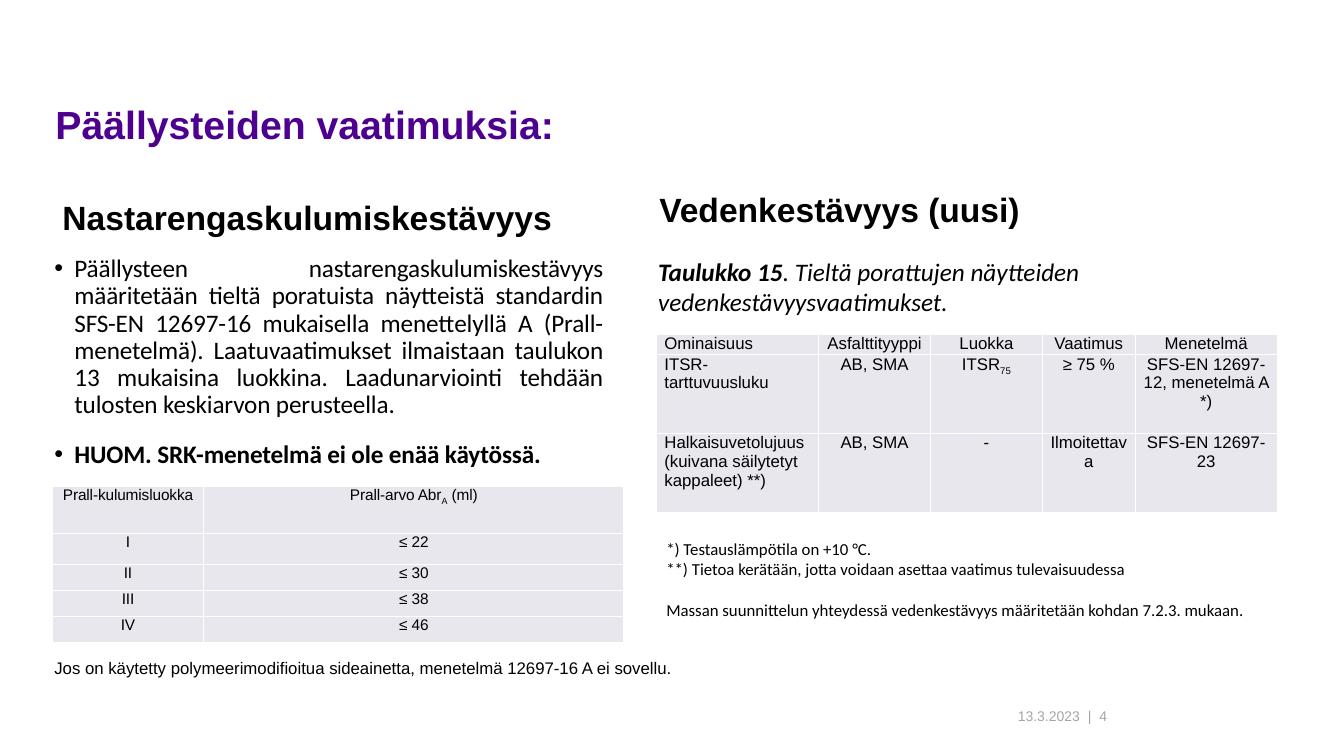
import lxml.etree
import pptx
import pptx.dml.color
import pptx.enum.text
import pptx.oxml
import pptx.oxml.ns
import pptx.util

Inches = pptx.util.Inches
Pt = pptx.util.Pt
Align = pptx.enum.text.PP_ALIGN
Anchor = pptx.enum.text.MSO_ANCHOR
AutoSize = pptx.enum.text.MSO_AUTO_SIZE

PURPLE = pptx.dml.color.RGBColor(0x4E, 0x00, 0x8E)
BLACK = pptx.dml.color.RGBColor(0, 0, 0)
GREY = pptx.dml.color.RGBColor(0xA6, 0xA6, 0xA6)
CELL_FILL = pptx.dml.color.RGBColor(0xE9, 0xE7, 0xEE)

SUBSCRIPT = {"baseline": -25}


def add_xml(parent, name, **attributes):
    return lxml.etree.SubElement(parent, pptx.oxml.ns.qn(name), attributes)


def write(paragraph, content, size=12, font="Arial", color=BLACK, bold=False,
          italic=False, align=Align.LEFT, line=None, before=0, after=0,
          bullet=False, tracking=None):
    """Fill a paragraph from a string or a list of (text, overrides) runs."""
    if bullet:
        properties = paragraph._p.get_or_add_pPr()
        properties.set("marL", str(Inches(0.2)))
        properties.set("indent", str(-Inches(0.2)))
        add_xml(properties, "a:buFont", typeface="Arial")
        add_xml(properties, "a:buChar", char="•")
    paragraph.alignment = align
    paragraph.space_before = Pt(before)
    paragraph.space_after = Pt(after)
    if line:
        paragraph.line_spacing = line
    runs = [(content, {})] if isinstance(content, str) else content
    for text, overrides in runs:
        run = paragraph.add_run()
        run.text = text
        run.font.size = Pt(size)
        run.font.name = font
        run.font.color.rgb = color
        run.font.bold = overrides.get("bold", bold)
        run.font.italic = italic
        run_properties = run._r.get_or_add_rPr()
        if tracking:
            run_properties.set("spc", str(round(tracking * 100)))
        if "baseline" in overrides:
            run_properties.set("baseline", str(overrides["baseline"] * 1000))


class RequirementSlide:
    """Holds the slide and the style shared by its elements."""

    def __init__(self, presentation):
        self.slide = presentation.slides.add_slide(presentation.slide_layouts[5])

    def title(self, text, left, top, width, height):
        heading = self.slide.shapes.title
        heading.left, heading.top = Inches(left), Inches(top)
        heading.width, heading.height = Inches(width), Inches(height)
        frame = heading.text_frame
        frame.auto_size = AutoSize.NONE
        frame.word_wrap = True
        frame.vertical_anchor = Anchor.TOP
        write(frame.paragraphs[0], text, size=28, color=PURPLE, bold=True, line=0.9)

    def text(self, paragraphs, left, top, width, height, anchor=Anchor.TOP,
             wrap=True, gaps=(), margins=(0.1, 0.1), **style):
        """Add a text box; gaps are the spaces before the later paragraphs."""
        box = self.slide.shapes.add_textbox(
            Inches(left), Inches(top), Inches(width), Inches(height))
        frame = box.text_frame
        frame.word_wrap = wrap
        frame.vertical_anchor = anchor
        frame.margin_left, frame.margin_right = map(Inches, margins)
        for index, content in enumerate(paragraphs):
            paragraph = frame.add_paragraph() if index else frame.paragraphs[0]
            write(paragraph, content, before=gaps[index - 1] if index else 0, **style)

    def subheading(self, text, left, top):
        self.text([text], left, top, 5.65, 0.88, anchor=Anchor.BOTTOM,
                  size=24, bold=True, line=0.9)

    def table(self, rows, left, top, widths, heights, margin, first_align, **style):
        grid = self.slide.shapes.add_table(
            len(rows), len(widths), Inches(left), Inches(top),
            Inches(sum(widths)), Inches(sum(heights))).table
        grid.first_row = grid.horz_banding = False
        for column, width in zip(grid.columns, widths):
            column.width = Inches(width)
        for row_index, (row, height) in enumerate(zip(rows, heights)):
            grid.rows[row_index].height = Inches(height)
            for column_index, content in enumerate(row):
                cell = grid.cell(row_index, column_index)
                cell.margin_left = cell.margin_right = Inches(margin)
                cell.margin_top = cell.margin_bottom = 0
                self.border(cell)
                cell.fill.solid()
                cell.fill.fore_color.rgb = CELL_FILL
                write(cell.text_frame.paragraphs[0], content,
                      align=Align.CENTER if column_index else first_align, **style)

    def border(self, cell):
        properties = cell._tc.get_or_add_tcPr()
        for side in ("a:lnL", "a:lnR", "a:lnT", "a:lnB"):
            edge = add_xml(properties, side, w=str(Pt(1)))
            add_xml(add_xml(edge, "a:solidFill"), "a:srgbClr", val="FFFFFF")


def main():
    presentation = pptx.Presentation()
    presentation.slide_width = Inches(13.33)
    presentation.slide_height = Inches(7.5)
    page = RequirementSlide(presentation)

    page.title("Päällysteiden vaatimuksia:", 0.45, 1, 11.65, 0.71)

    page.subheading("Nastarengaskulumiskestävyys", 0.52, 1.53)
    page.text(
        ["Päällysteen nastarengaskulumiskestävyys määritetään tieltä poratuista "
         "näytteistä standardin SFS-EN 12697-16 mukaisella menettelyllä A "
         "(Prall-menetelmä). Laatuvaatimukset ilmaistaan taulukon 13 mukaisina "
         "luokkina. Laadunarviointi tehdään tulosten keskiarvon perusteella.",
         [("HUOM. SRK-menetelmä ei ole enää käytössä.", {"bold": True})]],
        0.44, 2.49, 5.64, 2.3, gaps=[10], size=18, font="Calibri",
        align=Align.JUSTIFY, line=0.9, after=6, bullet=True, tracking=-0.1)
    wear_classes = [
        ["Prall-kulumisluokka",
         [("Prall-arvo Abr", {}), ("A", SUBSCRIPT), (" (ml)", {})]],
        ["I", "≤ 22"],
        ["II", "≤ 30"],
        ["III", "≤ 38"],
        ["IV", "≤ 46"],
    ]
    page.table(wear_classes, 0.52, 4.83, [1.5, 4.17],
               [0.46, 0.31, 0.26, 0.26, 0.26], margin=0.07,
               first_align=Align.CENTER, size=11, tracking=-0.1)
    page.text(["Jos on käytetty polymeerimodifioitua sideainetta, "
               "menetelmä 12697-16 A ei sovellu."],
              0.44, 6.48, 6.38, 0.3, wrap=False)

    page.subheading("Vedenkestävyys (uusi)", 6.44, 1.45)
    page.text([[("Taulukko 15", {"bold": True}),
                (". Tieltä porattujen näytteiden vedenkestävyysvaatimukset.", {})]],
              6.43, 2.49, 6.44, 0.71, size=18, font="Calibri", italic=True)
    water_resistance = [
        ["Ominaisuus", "Asfalttityyppi", "Luokka", "Vaatimus", "Menetelmä"],
        ["ITSR- tarttuvuusluku", "AB, SMA", [("ITSR", {}), ("75", SUBSCRIPT)],
         "≥ 75 %", "SFS-EN 12697-12, menetelmä A *)"],
        ["Halkaisuvetolujuus (kuivana säilytetyt kappaleet) **)", "AB, SMA", "-",
         "Ilmoitettava", "SFS-EN 12697-23"],
    ]
    page.table(water_resistance, 6.51, 3.32, [1.61, 1.11, 1.11, 0.92, 1.41],
               [0.19, 0.78, 0.78], margin=0.08, first_align=Align.LEFT)
    page.text(
        ["*) Testauslämpötila on +10 °C.",
         "**) Tietoa kerätään, jotta voidaan asettaa vaatimus tulevaisuudessa",
         "Massan suunnittelun yhteydessä vedenkestävyys määritetään "
         "kohdan 7.2.3. mukaan."],
        6.51, 5.29, 6.22, 0.91, anchor=Anchor.MIDDLE, gaps=[0, 14.6],
        font="Calibri")

    page.text(["13.3.2023"], 9.87, 6.96, 0.84, 0.28, anchor=Anchor.BOTTOM,
              margins=(0, 0), size=10, color=GREY, align=Align.RIGHT)
    page.text(["|  4"], 10.79, 6.96, 0.41, 0.28, anchor=Anchor.BOTTOM,
              margins=(0, 0.1), size=10, color=GREY)

    presentation.save("out.pptx")


if __name__ == "__main__":
    main()
